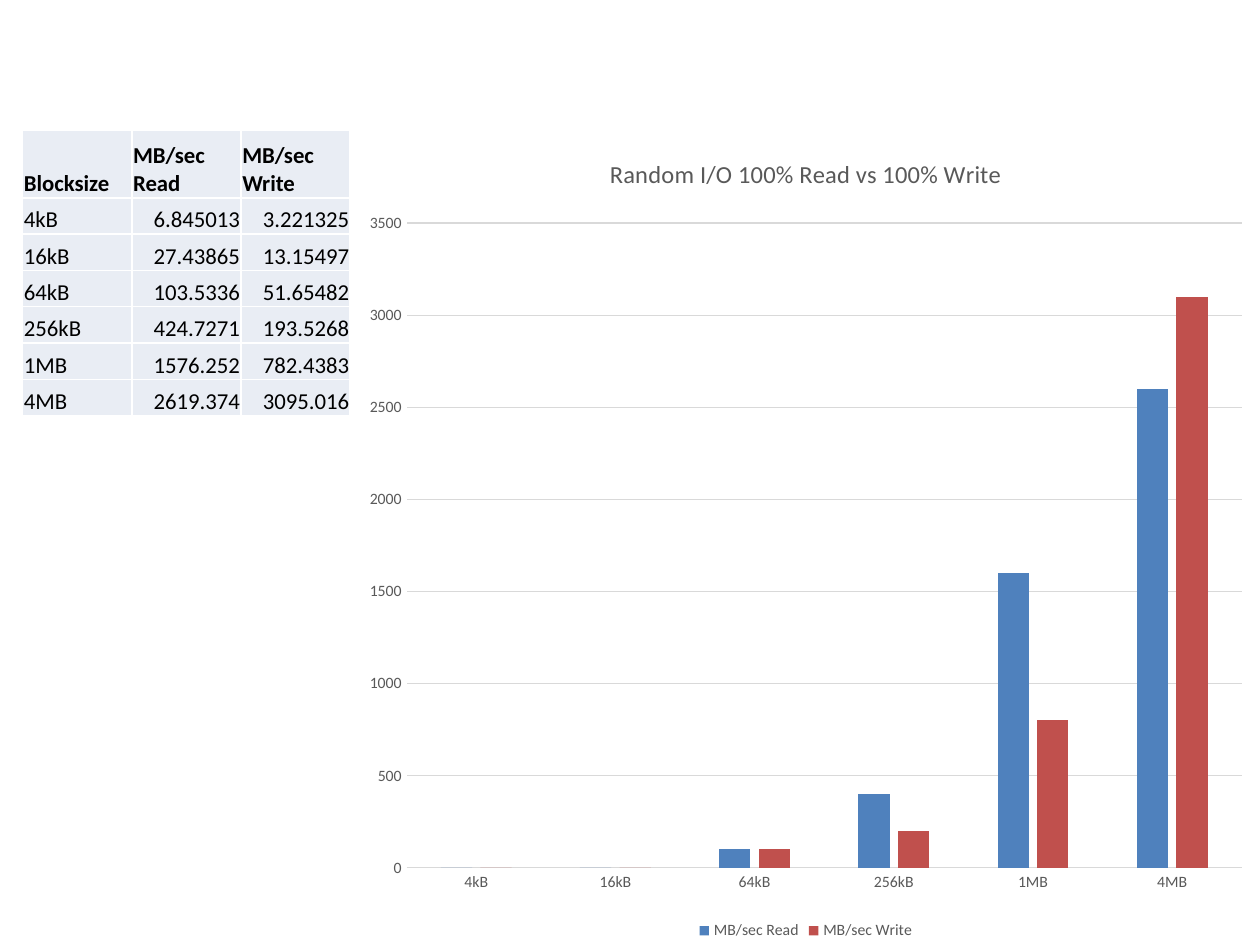
from pptx import Presentation
from pptx import util as u
from pptx.chart.data import CategoryChartData
from pptx.dml.color import RGBColor
from pptx.enum import chart as ch, text
from pptx.oxml import parse_xml
from pptx.oxml.ns import nsdecls

FONT = "Calibri"
COLORS = {"ink": "000000", "grey": "595959", "rule": "D9D9D9", "cell": "E9EDF4",
          "border": "FFFFFF", "read": "4F81BD", "write": "C0504D"}
HEADERS = ["Blocksize", "MB/sec Read", "MB/sec Write"]
ROWS = [("4kB", 6.845013, 3.221325), ("16kB", 27.43865, 13.15497),
        ("64kB", 103.5336, 51.65482), ("256kB", 424.7271, 193.5268),
        ("1MB", 1576.252, 782.4383), ("4MB", 2619.374, 3095.016)]

# Page grid: table on the left, chart fills the rest
WIDTH, HEIGHT = 10, 7.5
TOP, LEFT, SPLIT = 1.03, 0.18, 2.79
TABLE_WIDTH, TABLE_HEIGHT, HEAD_ROW = 2.6, 2.27, 0.54


def rgb(name):
    return RGBColor.from_string(COLORS[name])


def set_font(font, size, color, bold=False):
    font.name, font.size, font.bold = FONT, u.Pt(size), bold
    font.color.rgb = rgb(color)


def set_borders(cell):
    tc_pr = cell._tc.get_or_add_tcPr()
    for i, side in enumerate(("lnL", "lnR", "lnT", "lnB")):
        tc_pr.insert(i, parse_xml(
            f'<a:{side} {nsdecls("a")} w="12700"><a:solidFill>'
            f'<a:srgbClr val="{COLORS["border"]}"/></a:solidFill></a:{side}>'))


def fill_cell(cell, value, header, number):
    cell.margin_left = cell.margin_right = cell.margin_top = u.Inches(0.01)
    cell.margin_bottom = 0
    cell.vertical_anchor = text.MSO_ANCHOR.BOTTOM
    cell.fill.solid()
    cell.fill.fore_color.rgb = rgb("cell")
    set_borders(cell)
    p = cell.text_frame.paragraphs[0]
    p.text = str(value)
    p.alignment = text.PP_ALIGN.RIGHT if number else text.PP_ALIGN.LEFT
    set_font(p.font, 13, "ink", header)


def add_results_table(s):
    grid = [HEADERS, *ROWS]
    body_row = (TABLE_HEIGHT - HEAD_ROW) / len(ROWS)
    heights = [HEAD_ROW] + [body_row] * len(ROWS)
    table = s.shapes.add_table(
        len(grid), len(HEADERS), u.Inches(LEFT), u.Inches(TOP),
        u.Inches(TABLE_WIDTH), u.Inches(TABLE_HEIGHT)).table
    for row, height in zip(table.rows, heights):
        row.height = u.Inches(height)
    for i, values in enumerate(grid):
        for j, value in enumerate(values):
            fill_cell(table.cell(i, j), value, i == 0, i > 0 and j > 0)


def style_axis(axis):
    axis.major_tick_mark = axis.minor_tick_mark = ch.XL_TICK_MARK.NONE
    set_font(axis.tick_labels.font, 9, "grey")


def style_line(line):
    line.color.rgb = rgb("rule")
    line.width = u.Pt(0.75)


def add_results_chart(s):
    data = CategoryChartData()
    labels, *columns = zip(*ROWS)
    data.categories = labels
    for name, values in zip(HEADERS[1:], columns):
        # Chart values in whole hundreds
        data.add_series(name, [round(v, -2) for v in values])
    chart = s.shapes.add_chart(
        ch.XL_CHART_TYPE.COLUMN_CLUSTERED, u.Inches(SPLIT), u.Inches(TOP),
        u.Inches(WIDTH - SPLIT), u.Inches(HEIGHT - TOP), data).chart
    set_font(chart.font, 10, "ink")

    # Title and legend
    chart.has_title = True
    p = chart.chart_title.text_frame.paragraphs[0]
    p.text = "Random I/O 100% Read vs 100% Write"
    set_font(p.font, 14, "grey")
    chart.chart_title.include_in_layout = False
    chart.has_legend = True
    chart.legend.position = ch.XL_LEGEND_POSITION.BOTTOM
    chart.legend.include_in_layout = False
    set_font(chart.legend.font, 9, "grey")

    # Axes
    style_axis(chart.category_axis)
    style_line(chart.category_axis.format.line)
    style_axis(chart.value_axis)
    chart.value_axis.format.line.fill.background()
    chart.value_axis.has_major_gridlines = True
    style_line(chart.value_axis.major_gridlines.format.line)

    # Columns
    plot = chart.plots[0]
    plot.gap_width, plot.overlap = 219, -27
    plot.vary_by_categories = False
    for series, color in zip(plot.series, ("read", "write")):
        series.format.fill.solid()
        series.format.fill.fore_color.rgb = rgb(color)


def main():
    prs = Presentation()
    prs.slide_width, prs.slide_height = u.Inches(WIDTH), u.Inches(HEIGHT)
    s = prs.slides.add_slide(prs.slide_layouts[6])
    add_results_table(s)
    add_results_chart(s)
    prs.save("out.pptx")


if __name__ == "__main__":
    main()
